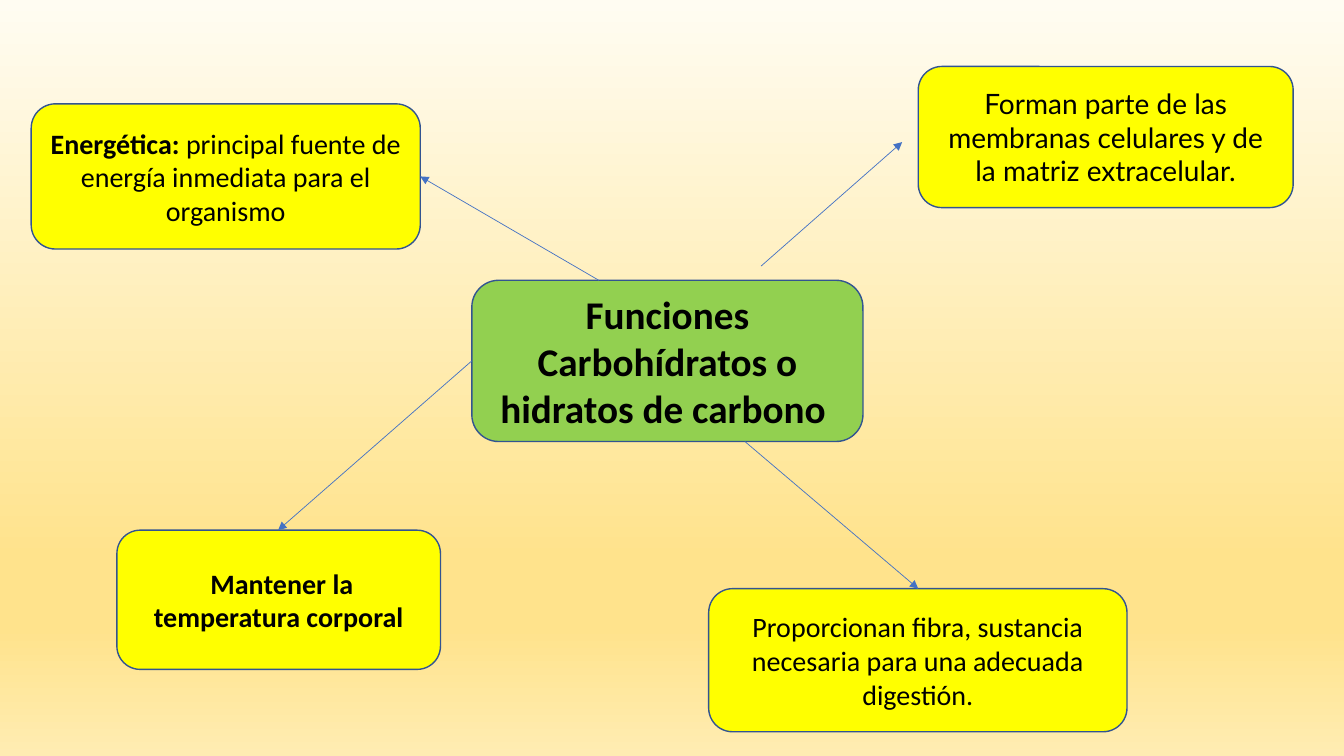
from dataclasses import dataclass
from lxml.etree import SubElement
from pptx import Presentation
from pptx.dml.color import RGBColor as Rgb
from pptx.enum.shapes import MSO_CONNECTOR as Link, MSO_SHAPE as Form
from pptx.enum.text import MSO_ANCHOR as Anchor, PP_ALIGN as Align
from pptx.oxml.ns import qn
from pptx.util import Pt


@dataclass(frozen=True)
class Theme:
    hub: str = "92D050"
    leaf: str = "FFFF00"
    edge: str = "325491"
    arrow: str = "4472C4"
    ink: str = "000000"
    title: int = 28
    body: int = 20
    font: str = "Calibri"
    alt: str = "Lato"
    back: tuple = ((0, "FFFCF2"), (74, "FFE38C"), (83, "FFE38C"), (100, "FFECB2"))


THEME = Theme()

LEAVES = [
    ((22.3, 74.2, 277.9, 103.7), THEME.font,
     [("Energética: ", True),
      ("principal fuente de energía inmediata para el organismo", False)]),
    ((83.5, 378.7, 231.1, 99.4), THEME.font,
     [(" Mantener la temperatura corporal", True)]),
    ((655.9, 47.5, 267.8, 100.8), THEME.alt,
     [("Forman parte de las membranas celulares y de la matriz extracelular.", False)]),
    ((506.2, 420.5, 298.8, 102.2), THEME.font,
     [("Proporcionan fibra, sustancia necesaria para una adecuada digestión.", False)]),
]

ARROWS = [
    (543.6, 190.1, 644.4, 101.5),
    (427.7, 200.2, 300.2, 126),
    (337, 257.8, 198.7, 378.7),
    (532.1, 315.4, 655.9, 420.5),
]


def paint(slide):
    fill = slide.background.fill
    fill.gradient()
    fill.gradient_angle = 270
    stops = slide.element.find(".//" + qn("a:gsLst"))
    for old in list(stops):
        stops.remove(old)
    for place, tone in THEME.back:
        stop = SubElement(stops, qn("a:gs"), pos=str(place * 1000))
        SubElement(stop, qn("a:srgbClr"), val=tone)


def add_box(slide, spot, tone, size, font, parts):
    box = slide.shapes.add_shape(Form.ROUNDED_RECTANGLE, *map(Pt, spot))
    box.shadow.inherit = False
    box.fill.solid()
    box.fill.fore_color.rgb = Rgb.from_string(tone)
    box.line.color.rgb = Rgb.from_string(THEME.edge)
    box.line.width = Pt(1)
    frame = box.text_frame
    frame.word_wrap = True
    frame.vertical_anchor = Anchor.MIDDLE
    para = frame.paragraphs[0]
    para.alignment = Align.CENTER
    for text, bold in parts:
        run = para.add_run()
        run.text = text
        run.font.name = font
        run.font.size = Pt(size)
        run.font.bold = bold
        run.font.color.rgb = Rgb.from_string(THEME.ink)


def add_arrow(slide, ends):
    arrow = slide.shapes.add_connector(Link.STRAIGHT, *map(Pt, ends))
    arrow.line.color.rgb = Rgb.from_string(THEME.arrow)
    arrow.line.width = Pt(0.5)
    SubElement(arrow.line._get_or_add_ln(), qn("a:tailEnd"), type="triangle")
    SubElement(arrow.element.spPr, qn("a:effectLst"))


def main():
    deck = Presentation()
    deck.slide_width, deck.slide_height = Pt(960), Pt(540)
    slide = deck.slides.add_slide(deck.slide_layouts[6])
    paint(slide)
    add_box(slide, (337, 200.2, 279.4, 115.2), THEME.hub, THEME.title, THEME.font,
            [("Funciones Carbohídratos o hidratos de carbono ", True)])
    for spot, font, parts in LEAVES:
        add_box(slide, spot, THEME.leaf, THEME.body, font, parts)
    for ends in ARROWS:
        add_arrow(slide, ends)
    deck.save("out.pptx")


if __name__ == "__main__":
    main()
